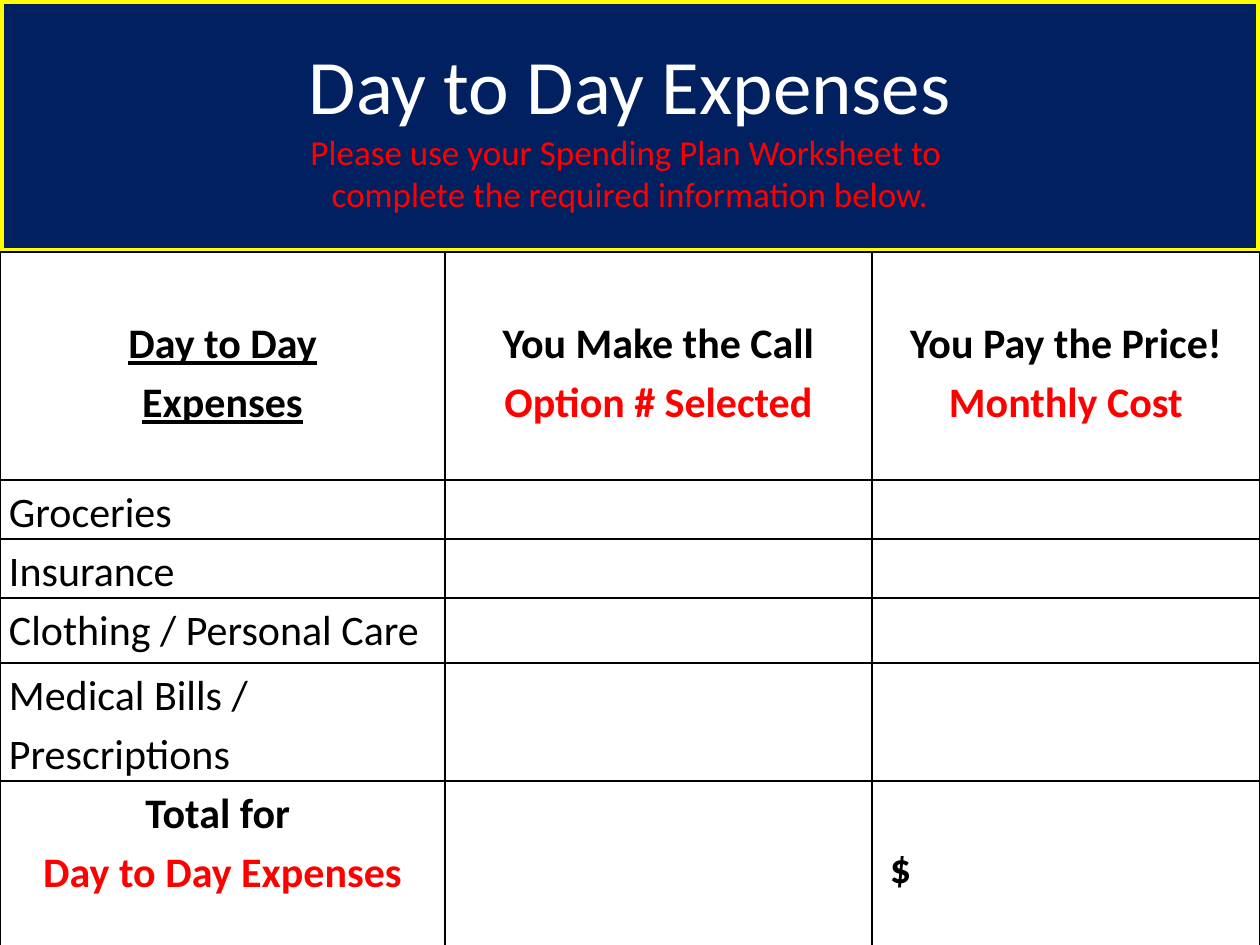
"""Build the Day to Day Expenses worksheet slide."""

from dataclasses import dataclass
from typing import Any

from lxml.etree import SubElement
from pptx import Presentation
from pptx.dml.color import RGBColor
from pptx.enum.text import MSO_ANCHOR as Anchor, MSO_AUTO_SIZE as AutoSize, PP_ALIGN as Align
from pptx.oxml.ns import qn
from pptx.util import Emu, Pt

EMU_PER_PX = 914400 / 126
SLIDE_W, SLIDE_H = 1260, 945
BANNER_H = 252
COLUMN_WIDTHS = (445, 427, 388)


@dataclass(frozen=True)
class Theme:
    font: str = "Calibri"
    navy: str = "002060"
    yellow: str = "FFFF00"
    white: str = "FFFFFF"
    black: str = "000000"
    red: str = "FF0000"
    title: int = 44
    subtitle: int = 20
    body: int = 24
    banner_line: float = 4.5
    grid_line: int = 1
    leading: float = 1.15


THEME = Theme()


@dataclass(frozen=True)
class Line:
    text: str
    color: str = THEME.black
    bold: bool = False
    underline: bool = False


@dataclass(frozen=True)
class Entry:
    lines: tuple[Line, ...] = ()
    align: Align = Align.LEFT
    top: int = 0
    left: int = 9


@dataclass(frozen=True)
class Row:
    height: int
    entries: tuple[Entry, Entry, Entry]


def heading(first: Line, second: Line) -> Entry:
    """Return a centred two-line column heading."""
    return Entry((first, second), Align.CENTER, top=59)


def expense(label: str, height: int) -> Row:
    """Return a row with a label and two blanks to fill in."""
    return Row(height, (Entry((Line(label),)), Entry(), Entry()))


ROWS = (
    Row(228, (
        heading(Line("Day to Day", bold=True, underline=True),
                Line("Expenses", bold=True, underline=True)),
        heading(Line("You Make the Call", bold=True),
                Line("Option # Selected", THEME.red, bold=True)),
        heading(Line("You Pay the Price!", bold=True),
                Line("Monthly Cost", THEME.red, bold=True)),
    )),
    expense("Groceries", 59),
    expense("Insurance", 59),
    expense("Clothing / Personal Care", 65),
    expense("Medical Bills / Prescriptions", 118),
    Row(207, (
        Entry((Line("Total for ", bold=True),
               Line("Day to Day Expenses", THEME.red, bold=True)), Align.CENTER),
        Entry(),
        Entry((Line("$", bold=True),), top=55, left=18),
    )),
)


def px(length: int) -> Emu:
    """Turn pixels into EMU."""
    return Emu(round(length * EMU_PER_PX))


def apply(target: Any, values: dict[str, Any]) -> None:
    """Set each named attribute on the target."""
    for name, value in values.items():
        setattr(target, name, value)


def add_text(paragraph: Any, line: Line, size: int) -> None:
    """Append one formatted run to a paragraph."""
    run = paragraph.add_run()
    run.text = line.text
    apply(run.font, {"name": THEME.font, "size": Pt(size), "bold": line.bold,
                     "underline": line.underline})
    run.font.color.rgb = RGBColor.from_string(line.color)


def draw_banner(title: Any) -> None:
    """Format the title placeholder as the banner."""
    apply(title, {"left": px(0), "top": px(0), "width": px(SLIDE_W), "height": px(BANNER_H)})
    title.fill.solid()
    title.fill.fore_color.rgb = RGBColor.from_string(THEME.navy)
    title.line.color.rgb = RGBColor.from_string(THEME.yellow)
    title.line.width = Pt(THEME.banner_line)
    apply(title.text_frame, {"word_wrap": True, "auto_size": AutoSize.NONE,
                             "vertical_anchor": Anchor.MIDDLE})
    paragraph = title.text_frame.paragraphs[0]
    paragraph.alignment = Align.CENTER
    add_text(paragraph, Line("Day to Day Expenses", THEME.white), THEME.title)
    for text in ("Please use your Spending Plan Worksheet to ",
                 "complete the required information below."):
        paragraph.add_line_break()
        add_text(paragraph, Line(text, THEME.red), THEME.subtitle)


def draw_borders(cell: Any) -> None:
    """Give a cell a solid line on all four sides."""
    properties = cell._tc.get_or_add_tcPr()
    for side in ("a:lnL", "a:lnR", "a:lnT", "a:lnB"):
        border = SubElement(properties, qn(side), w=str(Pt(THEME.grid_line)))
        SubElement(SubElement(border, qn("a:solidFill")), qn("a:srgbClr"), val=THEME.black)


def draw_entry(cell: Any, entry: Entry) -> None:
    """Fill one table cell with its lines."""
    draw_borders(cell)
    cell.fill.solid()
    cell.fill.fore_color.rgb = RGBColor.from_string(THEME.white)
    apply(cell, {"margin_left": px(entry.left), "margin_right": px(9),
                 "margin_top": px(entry.top), "margin_bottom": px(0),
                 "vertical_anchor": Anchor.TOP})
    frame = cell.text_frame
    for index, line in enumerate(entry.lines):
        paragraph = frame.add_paragraph() if index else frame.paragraphs[0]
        apply(paragraph, {"alignment": entry.align, "line_spacing": THEME.leading})
        add_text(paragraph, line, THEME.body)


def draw_worksheet(slide: Any) -> None:
    """Draw the expense table under the banner."""
    height = sum(row.height for row in ROWS)
    worksheet = slide.shapes.add_table(len(ROWS), len(COLUMN_WIDTHS), px(0), px(BANNER_H),
                                       px(SLIDE_W), px(height)).table
    apply(worksheet, {"first_row": False, "horz_banding": False})
    for column, width in zip(worksheet.columns, COLUMN_WIDTHS):
        column.width = px(width)
    for table_row, row in zip(worksheet.rows, ROWS):
        table_row.height = px(row.height)
        for cell, entry in zip(table_row.cells, row.entries):
            draw_entry(cell, entry)


def main() -> None:
    """Build and save the slide."""
    deck = Presentation()
    apply(deck, {"slide_width": px(SLIDE_W), "slide_height": px(SLIDE_H)})
    slide = deck.slides.add_slide(deck.slide_layouts[5])
    draw_banner(slide.shapes.title)
    draw_worksheet(slide)
    deck.save("out.pptx")


if __name__ == "__main__":
    main()
